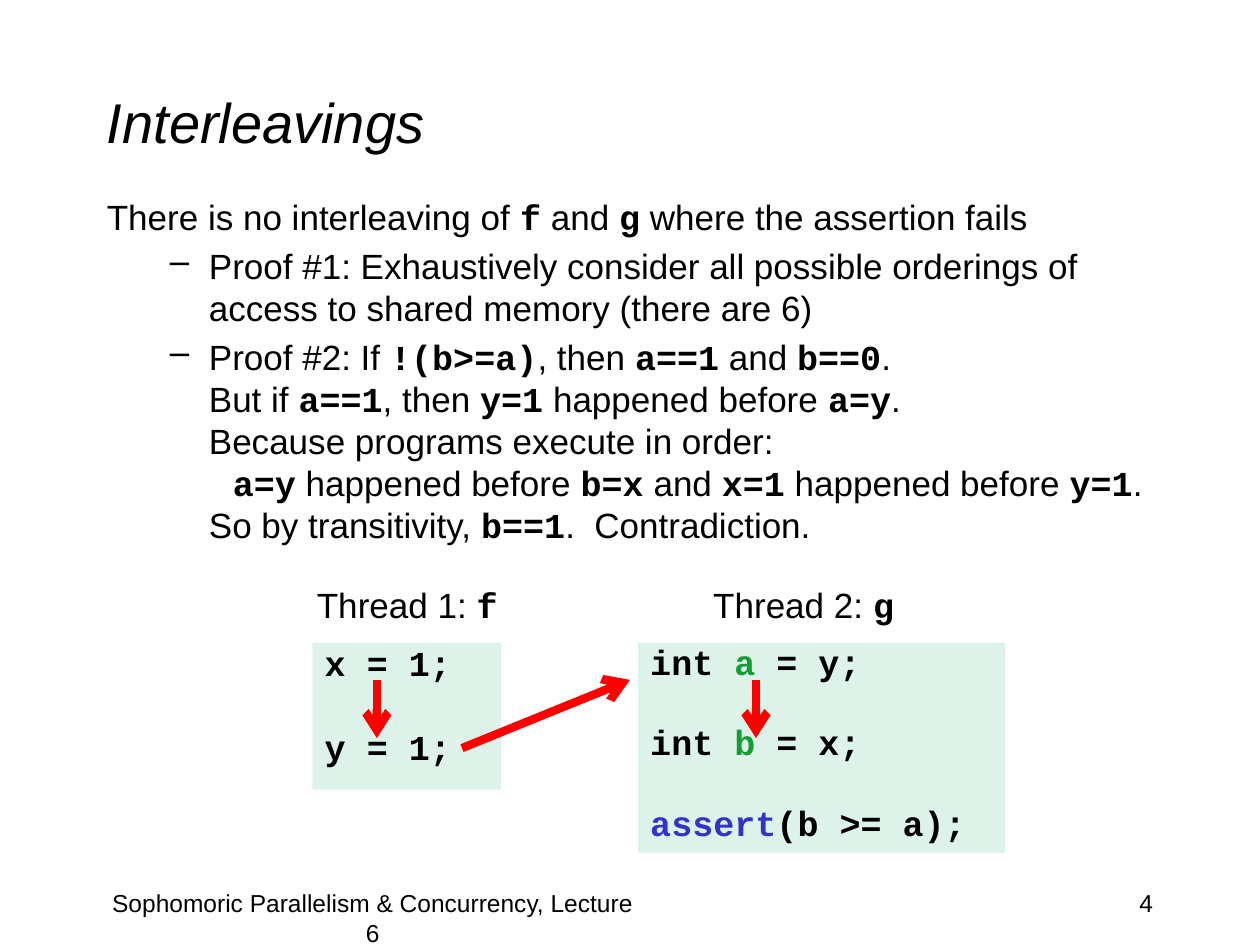
from lxml.etree import SubElement
from pptx import Presentation
from pptx.dml.color import RGBColor
from pptx.enum.shapes import MSO_CONNECTOR, MSO_SHAPE
from pptx.enum.text import MSO_ANCHOR, PP_ALIGN
from pptx.oxml.ns import qn
from pptx.util import Inches, Pt

BLACK = RGBColor(0x00, 0x00, 0x00)
MINT = RGBColor(0xDD, 0xF3, 0xEA)
GREEN = RGBColor(0x11, 0x9F, 0x33)
BLUE = RGBColor(0x33, 0x33, 0xCC)
RED = RGBColor(0xFF, 0x00, 0x00)


class LectureSlide:
    """Draws styled elements on one slide, measured on a 120 by 90 grid."""

    columns, rows = 120, 90
    sans, mono = "Arial", "Courier New"
    body_size, footer_size, title_size = 20, 14, 32

    def __init__(self, presentation):
        self.slide = presentation.slides.add_slide(presentation.slide_layouts[6])
        self.column = presentation.slide_width / self.columns
        self.row = presentation.slide_height / self.rows

    def place(self, column, row):
        return round(column * self.column), round(row * self.row)

    def set_text(self, paragraph, text, size=body_size, accent=None):
        font = paragraph.font
        font.size, font.color.rgb = Pt(size), BLACK
        font.name = self.mono if accent else self.sans
        font.bold = bool(accent)
        for number, line in enumerate(text.split("\n")):
            if number:
                paragraph.add_line_break()
            for index, part in enumerate(line.split("`")):
                if not part:
                    continue
                run = paragraph.add_run()
                run.text = part
                if index % 2 and accent:
                    run.font.color.rgb = accent
                elif index % 2:
                    run.font.name, run.font.bold = self.mono, True

    def text(self, box, text, size=body_size, align=PP_ALIGN.LEFT):
        column, row, width, height = box
        shape = self.slide.shapes.add_textbox(*self.place(column, row), *self.place(width, height))
        shape.text_frame.word_wrap = True
        paragraph = shape.text_frame.paragraphs[0]
        paragraph.alignment = align
        self.set_text(paragraph, text, size)
        return shape.text_frame

    def title(self, box, text):
        frame = self.text(box, text, self.title_size)
        frame.vertical_anchor = MSO_ANCHOR.MIDDLE
        frame.paragraphs[0].font.italic = True

    def body(self, box, lead, points):
        frame = self.text(box, lead)
        frame.paragraphs[0].space_before = Pt(4)
        for point in points:
            paragraph = frame.add_paragraph()
            paragraph.space_before = Pt(4)
            self.set_text(paragraph, point)
            properties = paragraph._p.get_or_add_pPr()
            properties.set("marL", str(Inches(0.81)))
            properties.set("indent", str(Inches(-0.31)))
            bullet = SubElement(properties, qn("a:buChar"))
            bullet.set("char", "–")
            properties.find(qn("a:defRPr")).addprevious(bullet)

    def code(self, box, lines, spacing):
        column, row, width, height = box
        shape = self.slide.shapes.add_shape(
            MSO_SHAPE.RECTANGLE, *self.place(column, row), *self.place(width, height))
        shape.shadow.inherit = False
        shape.fill.solid()
        shape.fill.fore_color.rgb = MINT
        shape.line.fill.background()
        frame = shape.text_frame
        frame.word_wrap = True
        frame.vertical_anchor = MSO_ANCHOR.TOP
        for index, (line, accent) in enumerate(lines):
            paragraph = frame.add_paragraph() if index else frame.paragraphs[0]
            paragraph.alignment = PP_ALIGN.LEFT
            paragraph.line_spacing = Pt(spacing)
            paragraph.space_before = Pt(spacing + 8 if index else 4)
            self.set_text(paragraph, line, accent=accent)

    def arrow(self, start, end):
        connector = self.slide.shapes.add_connector(
            MSO_CONNECTOR.STRAIGHT, *self.place(*start), *self.place(*end))
        connector.line.color.rgb = RED
        connector.line.width = Pt(4.75)
        properties = connector._element.spPr
        SubElement(properties.find(qn("a:ln")), qn("a:tailEnd")).set("type", "arrow")
        SubElement(properties, qn("a:effectLst"))


def main():
    presentation = Presentation()
    presentation.slide_width, presentation.slide_height = Inches(10), Inches(7.5)
    slide = LectureSlide(presentation)
    slide.title((9, 4, 102, 15), "Interleavings")
    slide.text((86, 84, 25, 6), "4", slide.footer_size, PP_ALIGN.RIGHT)
    slide.text((9, 84, 53, 6), "Sophomoric Parallelism & Concurrency, Lecture 6",
               slide.footer_size, PP_ALIGN.CENTER)
    slide.body((9, 18, 102, 32), "There is no interleaving of `f` and `g` where the assertion fails", [
        "Proof #1: Exhaustively consider all possible orderings of access to shared memory (there are 6)",
        "Proof #2: If `!(b>=a)`, then `a==1` and `b==0`.\n"
        "But if `a==1`, then `y=1` happened before `a=y`.\n"
        "Because programs execute in order:\n"
        "\t`a=y` happened before `b=x` and `x=1` happened before `y=1`.\n"
        "So by transitivity, `b==1`.  Contradiction.",
    ])
    slide.code((29.75, 61.2, 18, 14), [("x = 1;", BLACK), ("y = 1;", BLACK)], 20)
    slide.code((60.75, 61.2, 35, 20),
               [("int `a` = y;", GREEN), ("int `b` = x;", GREEN), ("`assert`(b >= a);", BLUE)], 19)
    slide.text((29, 55, 20, 5.25), "Thread 1: `f`")
    slide.text((66.75, 55, 25, 5.25), "Thread 2: `g`")
    slide.arrow((44, 71.25), (60, 64.75))
    for column in (35.9, 72):
        slide.arrow((column, 64.75), (column, 70.3))
    presentation.save("out.pptx")


if __name__ == "__main__":
    main()
